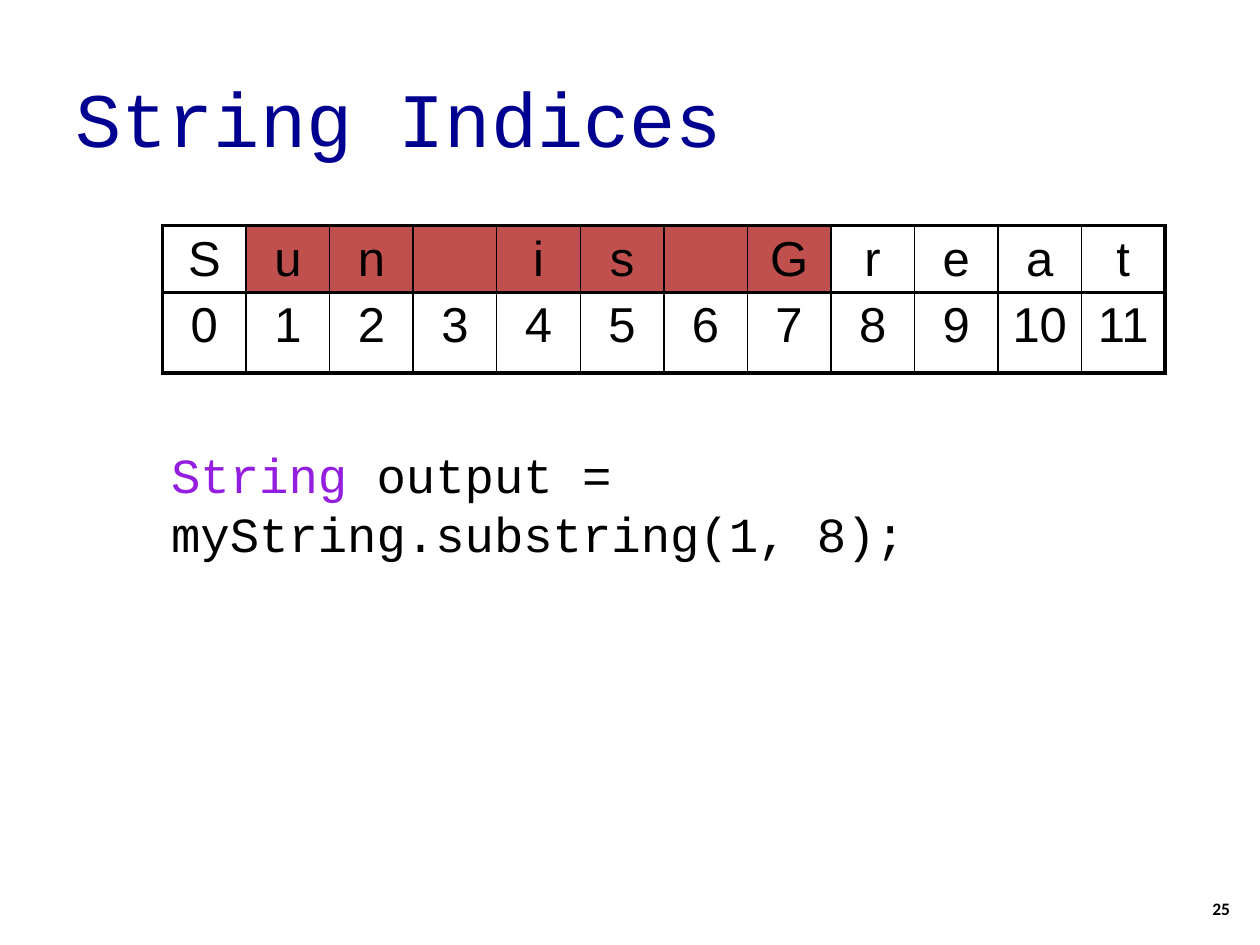
from lxml.etree import SubElement
from pptx import Presentation
from pptx.dml.color import RGBColor
from pptx.enum.text import MSO_ANCHOR, PP_ALIGN
from pptx.oxml.ns import qn
from pptx.util import Inches, Pt

COLORS = {
    "title": "000090",
    "ink": "000000",
    "keyword": "941EDF",
    "selected": "C0504D",
}
TITLE = {"name": "Courier New", "size": Pt(44)}
CODE = {"name": "Courier New", "size": Pt(28)}
CELL = {"name": "Arial", "size": Pt(28)}
NUMBER = {"name": "Calibri", "size": Pt(10), "bold": True}

PHRASE = "Sun is Great"
SELECTION = range(1, 8)
THIN, THICK = 1, 2.25


def add_run(paragraph, text, style, color):
    run = paragraph.add_run()
    run.text = text
    for attribute, value in style.items():
        setattr(run.font, attribute, value)
    run.font.color.rgb = RGBColor.from_string(COLORS[color])


def add_text(slide, box, pieces, style, anchor=MSO_ANCHOR.TOP,
             align=PP_ALIGN.LEFT):
    frame = slide.shapes.add_textbox(*map(Inches, box)).text_frame
    frame.word_wrap = True
    frame.vertical_anchor = anchor
    paragraph = frame.paragraphs[0]
    paragraph.alignment = align
    for text, color in pieces:
        add_run(paragraph, text, style, color)


def add_borders(cell, widths):
    properties = cell._tc.get_or_add_tcPr()
    for side, width in widths.items():
        line = SubElement(properties, qn(f"a:ln{side}"), w=str(Pt(width)))
        fill = SubElement(line, qn("a:solidFill"))
        SubElement(fill, qn("a:srgbClr"), val=COLORS["ink"])


def fill_cell(cell, text, selected, widths):
    layout = {
        "margin_top": Inches(0.05),
        "margin_bottom": Inches(0.01),
        "vertical_anchor": MSO_ANCHOR.TOP,
    }
    for attribute, value in layout.items():
        setattr(cell, attribute, value)
    add_borders(cell, widths)
    if selected:
        cell.fill.solid()
        cell.fill.fore_color.rgb = RGBColor.from_string(COLORS["selected"])
    else:
        cell.fill.background()
    paragraph = cell.text_frame.paragraphs[0]
    paragraph.alignment = PP_ALIGN.CENTER
    if text.strip():
        add_run(paragraph, text, CELL, "ink")


def add_index_table(slide, box, row_heights):
    last = len(PHRASE) - 1
    table = slide.shapes.add_table(2, len(PHRASE), *map(Inches, box)).table
    table.first_row = table.horz_banding = False
    for column in table.columns:
        column.width = Inches(box[2] / len(PHRASE))
    for row, height in zip(table.rows, row_heights):
        row.height = Inches(height)
    for index, letter in enumerate(PHRASE):
        widths = {
            "L": THICK if index == 0 else THIN,
            "R": THICK if index == last else THIN,
            "T": THICK,
            "B": THICK,
        }
        fill_cell(table.cell(0, index), letter, index in SELECTION, widths)
        fill_cell(table.cell(1, index), str(index), False, widths)


def build_slide(presentation):
    slide = presentation.slides.add_slide(presentation.slide_layouts[6])
    add_text(slide, (0.5, 0.3, 9, 1.25), [("String Indices", "title")],
             TITLE, anchor=MSO_ANCHOR.MIDDLE)
    add_text(slide, (9.46, 7.01, 0.4, 0.4), [("25", "ink")], NUMBER,
             anchor=MSO_ANCHOR.MIDDLE, align=PP_ALIGN.RIGHT)
    add_index_table(slide, (1.29, 1.79, 7.96, 1.17), (0.53, 0.64))
    code = [("String", "keyword"),
            (" output = myString.substring(1, 8);", "ink")]
    add_text(slide, (1.26, 3.48, 7.15, 1.03), code, CODE)


def main():
    presentation = Presentation()
    presentation.slide_width = Inches(10)
    presentation.slide_height = Inches(7.5)
    build_slide(presentation)
    presentation.save("out.pptx")


if __name__ == "__main__":
    main()
